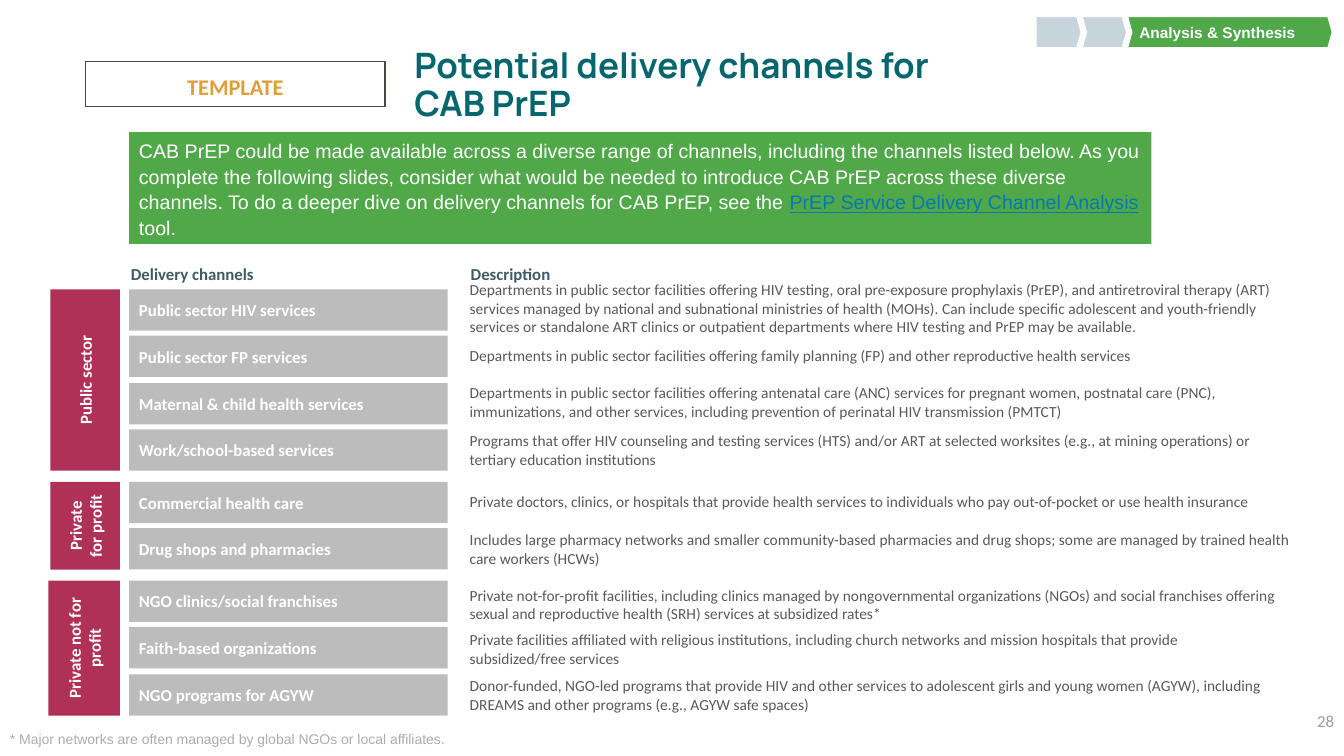
from dataclasses import dataclass
from pptx import Presentation
from pptx.dml.color import RGBColor
from pptx.enum.shapes import MSO_SHAPE
from pptx.enum.text import MSO_ANCHOR, MSO_AUTO_SIZE, PP_ALIGN
from pptx.util import Pt

EMU_PER_PX = 9144


@dataclass(frozen=True)
class Theme:
    """Colours, fonts and type sizes of the slide."""
    green: str = "50A849"
    link: str = "057AB2"
    crimson: str = "AF3158"
    bar: str = "BCBCBC"
    step: str = "C6D5DB"
    teal: str = "05676D"
    slate: str = "3F5B66"
    body: str = "595959"
    gold: str = "DE9F3B"
    outline: str = "4A4642"
    note: str = "AFABAB"
    number: str = "9E9D9A"
    white: str = "FFFFFF"
    display: str = "Manrope"
    sans: str = "Calibri"
    plain: str = "Arial"
    title_size: int = 25
    stamp_size: int = 16
    intro_size: int = 14
    label_size: int = 12
    body_size: int = 11
    note_size: int = 10


T = Theme()
ROW_H, COLUMN_X, COLUMN_W, DESC_X, DESC_H = 41, 128, 316, 456, 51
SECTOR_RIGHT = 119

INTRO = [
    ("CAB PrEP could be made available across a diverse range of channels, including the "
     "channels listed below. As you complete the following slides, consider what would be "
     "needed to introduce CAB PrEP across these diverse channels. To do a deeper dive on "
     "delivery channels for CAB PrEP, see the ", {}),
    ("PrEP Service Delivery Channel Analysis", {"color": T.link, "underline": True}),
    (" tool.", {}),
]

SECTORS = [
    ("Public sector", 287, 69, [
        ("Public sector HIV services", 841, -2,
         "Departments in public sector facilities offering HIV testing, oral pre-exposure "
         "prophylaxis (PrEP), and antiretroviral therapy (ART) services managed by national and "
         "subnational ministries of health (MOHs). Can include specific adolescent and "
         "youth-friendly services or standalone ART clinics or outpatient departments where HIV "
         "testing and PrEP may be available."),
        ("Public sector FP services", 818, -1,
         "Departments in public sector facilities offering family planning (FP) and other "
         "reproductive health services"),
        ("Maternal & child health services", 787, -2,
         "Departments in public sector facilities offering antenatal care (ANC) services for "
         "pregnant women, postnatal care (PNC), immunizations, and other services, including "
         "prevention of perinatal HIV transmission (PMTCT)"),
        ("Work/school-based services", 818, 0,
         "Programs that offer HIV counseling and testing services (HTS) and/or ART at selected "
         "worksites (e.g., at mining operations) or tertiary education institutions"),
    ]),
    ("Private for profit", 478, 69, [
        ("Commercial health care", 805, -1,
         "Private doctors, clinics, or hospitals that provide health services to individuals "
         "who pay out-of-pocket or use health insurance"),
        ("Drug shops and pharmacies", 841, 0,
         "Includes large pharmacy networks and smaller community-based pharmacies and drug "
         "shops; some are managed by trained health care workers (HCWs)"),
    ]),
    ("Private not for profit", 576, 71, [
        ("NGO clinics/social franchises", 823, 3,
         "Private not-for-profit facilities, including clinics managed by nongovernmental "
         "organizations (NGOs) and social franchises offering sexual and reproductive health "
         "(SRH) services at subsidized rates*"),
        ("Faith-based organizations", 818, 1,
         "Private facilities affiliated with religious institutions, including church networks "
         "and mission hospitals that provide subsidized/free services"),
        ("NGO programs for AGYW", 818, 0,
         "Donor-funded, NGO-led programs that provide HIV and other services to adolescent "
         "girls and young women (AGYW), including DREAMS and other programs (e.g., AGYW safe "
         "spaces)"),
    ]),
]


def px(n):
    """Turn px into EMU."""
    return round(n * EMU_PER_PX)


def style_font(font, color, **values):
    """Set a font's colour and its other format values."""
    font.color.rgb = RGBColor.from_string(color)
    for name, value in values.items():
        setattr(font, name, value)


def write(sp, runs, color, size, name=T.sans, bold=False, align=PP_ALIGN.LEFT,
          anchor=MSO_ANCHOR.MIDDLE, insets=(10, 5, 10, 5), spacing=1.0, wrap=True):
    """Fill a shape with one paragraph of a string or of (text, format) runs."""
    tf = sp.text_frame
    left, top, right, bottom = map(px, insets)
    frame = {"word_wrap": wrap, "auto_size": MSO_AUTO_SIZE.NONE, "vertical_anchor": anchor,
             "margin_left": left, "margin_top": top,
             "margin_right": right, "margin_bottom": bottom}
    for key, value in frame.items():
        setattr(tf, key, value)
    p = tf.paragraphs[0]
    p.alignment, p.line_spacing = align, spacing
    for text, extra in [(runs, {})] if isinstance(runs, str) else runs:
        r = p.add_run()
        r.text = text
        style_font(r.font, **{"color": color, "size": Pt(size), "name": name,
                              "bold": bold, **extra})


def add_box(s, box, fill, line=None, line_w=1, kind=MSO_SHAPE.RECTANGLE):
    """Add a flat filled shape with an optional outline."""
    sp = s.shapes.add_shape(kind, *map(px, box))
    sp.shadow.inherit = False
    sp.fill.solid()
    sp.fill.fore_color.rgb = RGBColor.from_string(fill)
    if line:
        sp.line.color.rgb = RGBColor.from_string(line)
        sp.line.width = Pt(line_w)
    else:
        sp.line.fill.background()
    return sp


def add_text(s, box, text, color, size, **values):
    """Add a text box."""
    write(s.shapes.add_textbox(*map(px, box)), text, color, size, **values)


def add_step(s, left, width, fill):
    """Add one arrow of the progress tracker."""
    sp = add_box(s, (left, 14, width, 36), fill, T.white, 4.5, MSO_SHAPE.PENTAGON)
    sp.adjustments[0] = 0.138
    return sp


def add_sector(s, name, top, width, channels):
    """Add a sector's channel rows and the upright bar that spans them."""
    for i, (channel, desc_w, shift, desc) in enumerate(channels):
        y = top + i * 93 // 2
        sp = add_box(s, (COLUMN_X, y, COLUMN_W, ROW_H), T.bar)
        write(sp, channel, T.white, T.label_size, bold=True, insets=(10, 5, 0, 5))
        desc_y = y + (ROW_H - DESC_H) // 2 + shift
        add_text(s, (DESC_X, desc_y, desc_w, DESC_H), desc, T.body, T.body_size)
    span = y + ROW_H - top
    mid_x, mid_y = SECTOR_RIGHT - width / 2, top + span / 2
    sp = add_box(s, (mid_x - span / 2, mid_y - width / 2, span, width), T.crimson)
    sp.rotation = 270
    write(sp, name, T.white, T.label_size, bold=True, align=PP_ALIGN.CENTER)


def add_title(s, box, text):
    """Move the title placeholder and fill it."""
    sp = s.shapes.title
    sp.left, sp.top, sp.width, sp.height = map(px, box)
    write(sp, text, T.teal, T.title_size, name=T.display, bold=True,
          insets=(88, 5, 10, 5), spacing=0.9)


def main():
    """Build and save the slide."""
    prs = Presentation()
    prs.slide_width, prs.slide_height = px(1333), px(750)
    s = prs.slides.add_slide(prs.slide_layouts[5])

    add_title(s, (323, 23, 660, 125), "Potential delivery channels for CAB PrEP")
    intro = add_box(s, (128, 131, 1014, 111), T.green)
    write(intro, INTRO, T.white, T.intro_size, name=T.plain,
          insets=(10, 10, 10, 10), spacing=1.1)
    for left, heading in ((120, "Delivery channels"), (457, "Description")):
        add_text(s, (left, 257, 325, 34), heading, T.slate, T.label_size,
                 bold=True, anchor=MSO_ANCHOR.TOP)
    for sector in SECTORS:
        add_sector(s, *sector)

    add_text(s, (0, 715, 1178, 35),
             "* Major networks are often managed by global NGOs or local affiliates.",
             T.note, T.note_size, name=T.plain, anchor=MSO_ANCHOR.TOP, insets=(10, 10, 10, 10))
    add_text(s, (1033, 695, 300, 40), "28", T.number, T.label_size, align=PP_ALIGN.RIGHT)
    stamp = add_box(s, (85, 61, 297, 45), T.white, T.outline)
    write(stamp, "TEMPLATE", T.gold, T.stamp_size, bold=True, align=PP_ALIGN.CENTER,
          anchor=MSO_ANCHOR.TOP, insets=(10, 8, 10, 0), spacing=1.15, wrap=False)

    current = add_step(s, 1116, 208, T.green)
    write(current, "Analysis & Synthesis", T.white, T.body_size, name=T.plain, bold=True,
          insets=(14, 5, 10, 5))
    for left in (1070, 1025):
        add_step(s, left, 50, T.step)
    prs.save("out.pptx")


if __name__ == "__main__":
    main()
